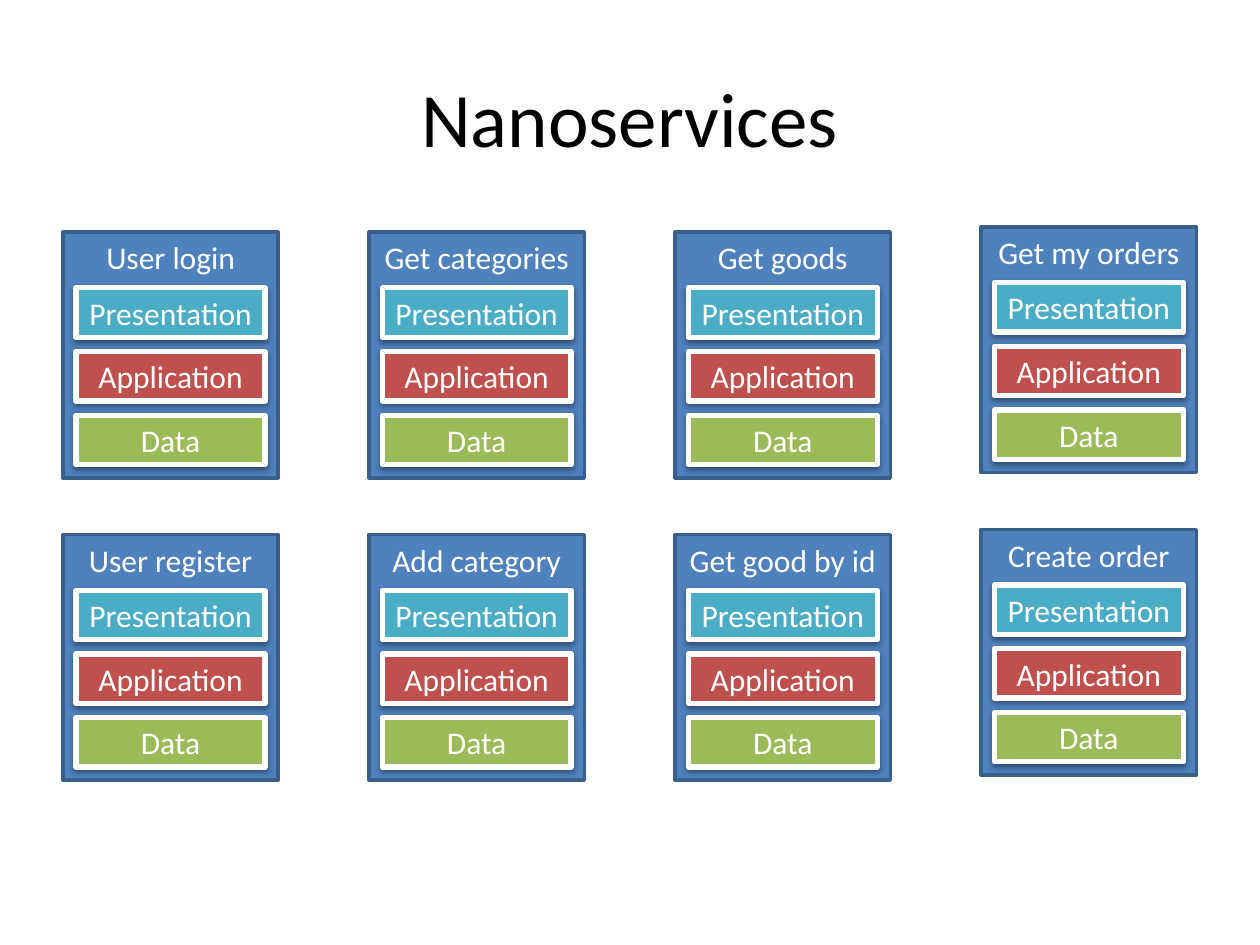
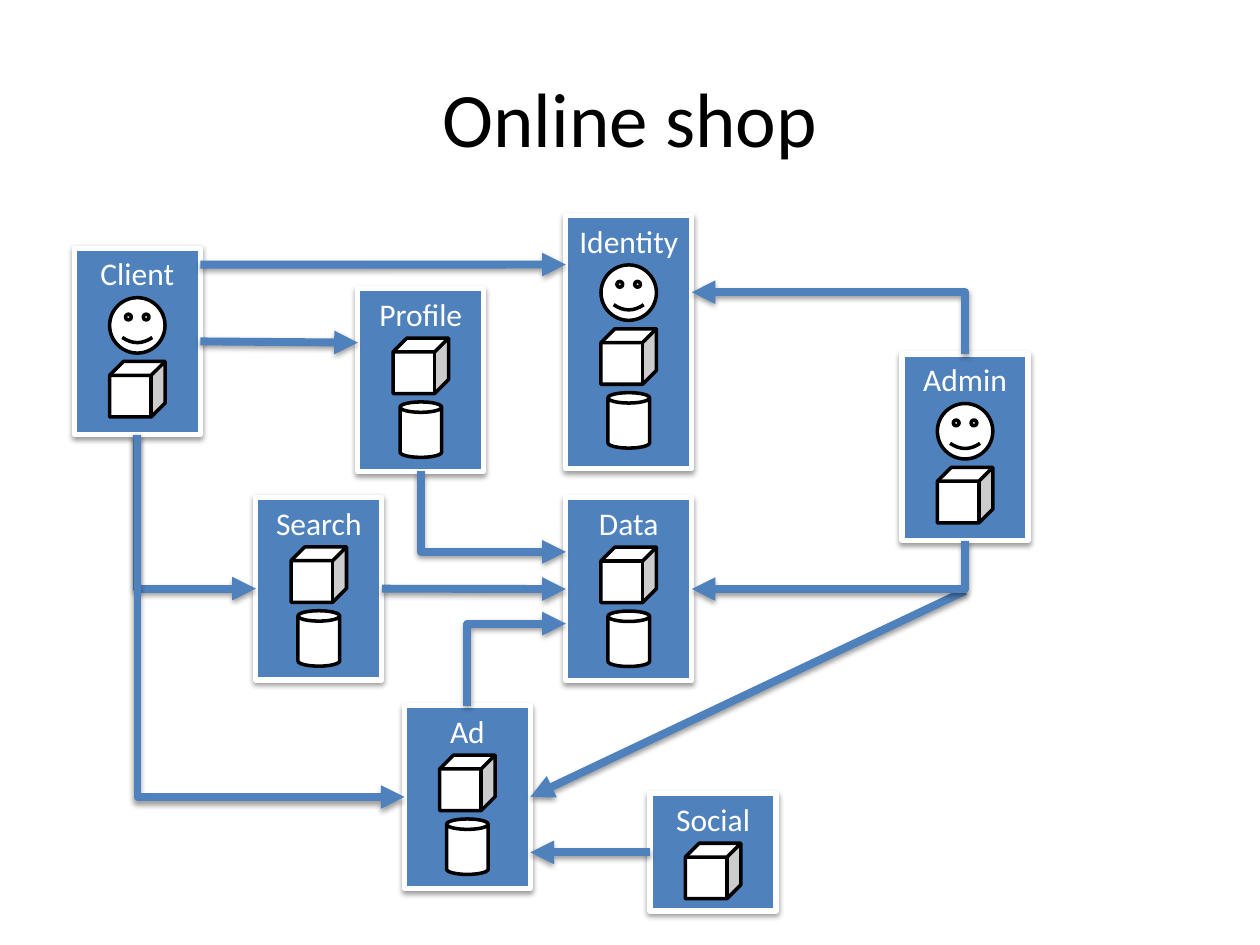
"""Build two slides: a grid of nanoservices and an online shop service map."""
from dataclasses import dataclass

from lxml.etree import SubElement
from pptx import Presentation
from pptx.dml.color import RGBColor
from pptx.enum.shapes import MSO_CONNECTOR as Connector, MSO_SHAPE as Preset
from pptx.enum.text import MSO_ANCHOR as Anchor, PP_ALIGN as Align
from pptx.oxml.ns import qn
from pptx.util import Pt

BLUE = RGBColor(0x4F, 0x81, 0xBD)
DARK_BLUE = RGBColor(0x3A, 0x5F, 0x8C)
TEAL = RGBColor(0x4B, 0xAC, 0xC6)
RED = RGBColor(0xC0, 0x50, 0x4D)
GREEN = RGBColor(0x9B, 0xBB, 0x59)
WHITE = RGBColor(0xFF, 0xFF, 0xFF)
BLACK = RGBColor(0x00, 0x00, 0x00)
FONT = "Calibri"

TOP, LEFT, BOTTOM, RIGHT = range(4)

LAYERS = [("Presentation", TEAL), ("Application", RED), ("Data", GREEN)]
NANOSERVICES = [
    ["User login", "Get categories", "Get goods", "Get my orders"],
    ["User register", "Add category", "Get good by id", "Create order"],
]
GRID_LEFT, GRID_TOP = 36, 132.7
COLUMN_STEP, ROW_STEP = 174.9, 172.8
LAST_COLUMN_RAISE = 3
CARD_WIDTH, CARD_HEIGHT = 123, 140.4
LAYER_WIDTH, LAYER_HEIGHT = 108, 28.3
LAYER_TOP, LAYER_STEP = 31.8, 36.4

FACE, CUBE, CAN = Preset.SMILEY_FACE, Preset.CUBE, Preset.CAN
SERVICES = [
    ("Identity", 323.3, 123.1, 144.7, [FACE, CUBE, CAN]),
    ("Client", 42.5, 141.8, 106.6, [FACE, CUBE]),
    ("Admin", 515.5, 202.3, 106.6, [FACE, CUBE]),
    ("Data", 323.3, 284.4, 104.4, [CUBE, CAN]),
    ("Search", 146.2, 284.2, 104.4, [CUBE, CAN]),
    ("Ad", 231.1, 403.2, 104.4, [CUBE, CAN]),
    ("Social", 371.5, 453.6, 67, [CUBE]),
    ("Profile", 204.5, 164.9, 104.4, [CUBE, CAN]),
]
SERVICE_WIDTH = 72
ICON_SIZE, CAN_WIDTH = 31.7, 23.8
ICON_TOP, ICON_STEP = 28.3, 36.5


@dataclass
class Port:
    """A point at a service's side, shifted from the middle of that side."""
    service: str
    side: int
    shift: float = 0

    def position(self, boxes):
        """Return the point on the slide."""
        box = boxes[self.service]
        across = {LEFT: 0, RIGHT: box.width}.get(self.side, box.width // 2)
        down = {TOP: 0, BOTTOM: box.height}.get(self.side, box.height // 2)
        return box.left + across, box.top + down + Pt(self.shift)


STRAIGHT_LINKS = [
    (Port("Client", RIGHT, -43.9), Port("Identity", LEFT, -44.25)),
    (Port("Admin", BOTTOM, 28.8), Port("Ad", RIGHT)),
    (Port("Social", LEFT), Port("Ad", RIGHT, 31.7)),
    (Port("Search", RIGHT), Port("Data", LEFT)),
    (Port("Client", RIGHT), Port("Profile", LEFT, -21.3)),
]
BENT_LINKS = [
    (Port("Client", BOTTOM), Port("Search", LEFT)),
    (Port("Admin", BOTTOM), Port("Data", RIGHT)),
    (Port("Client", BOTTOM), Port("Ad", LEFT)),
    (Port("Ad", TOP), Port("Data", LEFT, 19.8)),
    (Port("Admin", TOP), Port("Identity", RIGHT, -28.4)),
    (Port("Profile", BOTTOM), Port("Data", LEFT, -21.2)),
]


def write(frame, text, size, color):
    """Put one centred run of text in a frame."""
    paragraph = frame.paragraphs[0]
    paragraph.alignment = Align.CENTER
    run = paragraph.add_run()
    run.text = text
    run.font.name = FONT
    run.font.size = Pt(size)
    run.font.color.rgb = color


def add_titled_slide(presentation, title):
    """Add a title-only slide."""
    slide = presentation.slides.add_slide(presentation.slide_layouts[5])
    placeholder = slide.shapes.title
    placeholder.left, placeholder.top = Pt(36), Pt(21.6)
    placeholder.width, placeholder.height = Pt(648), Pt(90)
    placeholder.text_frame.vertical_anchor = Anchor.MIDDLE
    write(placeholder.text_frame, title, 44, BLACK)
    return slide


def cast_shadow(shape):
    """Give a shape or connector a soft shadow below it."""
    properties = shape._element.spPr
    effects = properties.find(qn("a:effectLst"))
    if effects is None:
        effects = SubElement(properties, qn("a:effectLst"))
    shadow = SubElement(effects, qn("a:outerShdw"), blurRad="40000",
                        dist="20000", dir="5400000", rotWithShape="0")
    color = SubElement(shadow, qn("a:srgbClr"), val=str(BLACK))
    SubElement(color, qn("a:alpha"), val="38000")


def add_figure(shapes, preset, left, top, width, height, fill, line, weight):
    """Add a preset shape with a plain fill and outline."""
    shape = shapes.add_shape(preset, Pt(left), Pt(top), Pt(width), Pt(height))
    shape.shadow.inherit = False
    shape.fill.solid()
    shape.fill.fore_color.rgb = fill
    shape.line.color.rgb = line
    shape.line.width = Pt(weight)
    return shape


def add_box(shapes, text, left, top, width, height, fill, line=WHITE,
            weight=3, anchor=Anchor.TOP):
    """Add a labelled rectangle; white-edged ones cast a shadow."""
    box = add_figure(shapes, Preset.RECTANGLE, left, top, width, height,
                     fill, line, weight)
    if line == WHITE:
        cast_shadow(box)
    frame = box.text_frame
    frame.word_wrap = True
    frame.margin_left = frame.margin_right = Pt(3.6)
    frame.vertical_anchor = anchor
    write(frame, text, 18, WHITE)
    return box


def add_nanoservice(slide, name, left, top):
    """Add a card that holds the three layers."""
    add_box(slide.shapes, name, left, top, CARD_WIDTH, CARD_HEIGHT, BLUE,
            DARK_BLUE, 2)
    layer_left = left + (CARD_WIDTH - LAYER_WIDTH) / 2
    for index, (layer, color) in enumerate(LAYERS):
        add_box(slide.shapes, layer, layer_left,
                top + LAYER_TOP + index * LAYER_STEP,
                LAYER_WIDTH, LAYER_HEIGHT, color, anchor=Anchor.MIDDLE)


def add_service(slide, name, left, top, height, icons):
    """Add a grouped service with its icons and return its box."""
    shapes = slide.shapes.add_group_shape().shapes
    box = add_box(shapes, name, left, top, SERVICE_WIDTH, height, BLUE)
    for index, icon in enumerate(icons):
        width = CAN_WIDTH if icon == CAN else ICON_SIZE
        add_figure(shapes, icon, left + (SERVICE_WIDTH - width) / 2,
                   top + ICON_TOP + index * ICON_STEP, width, ICON_SIZE,
                   WHITE, BLACK, 2)
    return box


def add_arrow(slide, boxes, begin, end):
    """Add a straight arrow, joined wherever it meets a side's middle."""
    arrow = slide.shapes.add_connector(
        Connector.STRAIGHT, *begin.position(boxes), *end.position(boxes))
    arrow.line.color.rgb = BLUE
    arrow.line.width = Pt(4.5)
    outline = arrow._element.spPr.find(qn("a:ln"))
    SubElement(outline, qn("a:tailEnd"), type="triangle")
    cast_shadow(arrow)
    if not begin.shift:
        arrow.begin_connect(boxes[begin.service], begin.side)
    if not end.shift:
        arrow.end_connect(boxes[end.service], end.side)
    return arrow


def add_bent_arrow(slide, boxes, begin, end):
    """Add an arrow that runs vertically, then horizontally."""
    (x1, y1), (x2, y2) = begin.position(boxes), end.position(boxes)
    across, down = x2 - x1, y2 - y1
    arrow = add_arrow(slide, boxes, begin, end)
    for joint in list(arrow._element.nvCxnSpPr.cNvCxnSpPr):
        joint.getparent().remove(joint)
    properties = arrow._element.spPr
    properties.find(qn("a:prstGeom")).set("prst", "bentConnector2")
    arrow.width, arrow.height = abs(down), abs(across)
    arrow.left = (x1 + x2 - arrow.width) // 2
    arrow.top = (y1 + y2 - arrow.height) // 2
    arrow.rotation = 90 if across * down < 0 else 270
    frame = properties.find(qn("a:xfrm"))
    frame.set("flipH", str(int(across > 0)))
    frame.set("flipV", str(int(down < 0)))


def build_nanoservices(presentation):
    """Build the grid of nanoservices."""
    slide = add_titled_slide(presentation, "Nanoservices")
    for row, names in enumerate(NANOSERVICES):
        for column, name in enumerate(names):
            raised = LAST_COLUMN_RAISE if column == len(names) - 1 else 0
            add_nanoservice(slide, name, GRID_LEFT + column * COLUMN_STEP,
                            GRID_TOP + row * ROW_STEP - raised)


def build_online_shop(presentation):
    """Build the map of the shop's services."""
    slide = add_titled_slide(presentation, "Online shop")
    boxes = {service[0]: add_service(slide, *service) for service in SERVICES}
    for begin, end in STRAIGHT_LINKS:
        add_arrow(slide, boxes, begin, end)
    for begin, end in BENT_LINKS:
        add_bent_arrow(slide, boxes, begin, end)


def main():
    """Create and save the presentation."""
    presentation = Presentation()
    presentation.slide_width, presentation.slide_height = Pt(720), Pt(540)
    build_nanoservices(presentation)
    build_online_shop(presentation)
    presentation.save("out.pptx")


if __name__ == "__main__":
    main()
